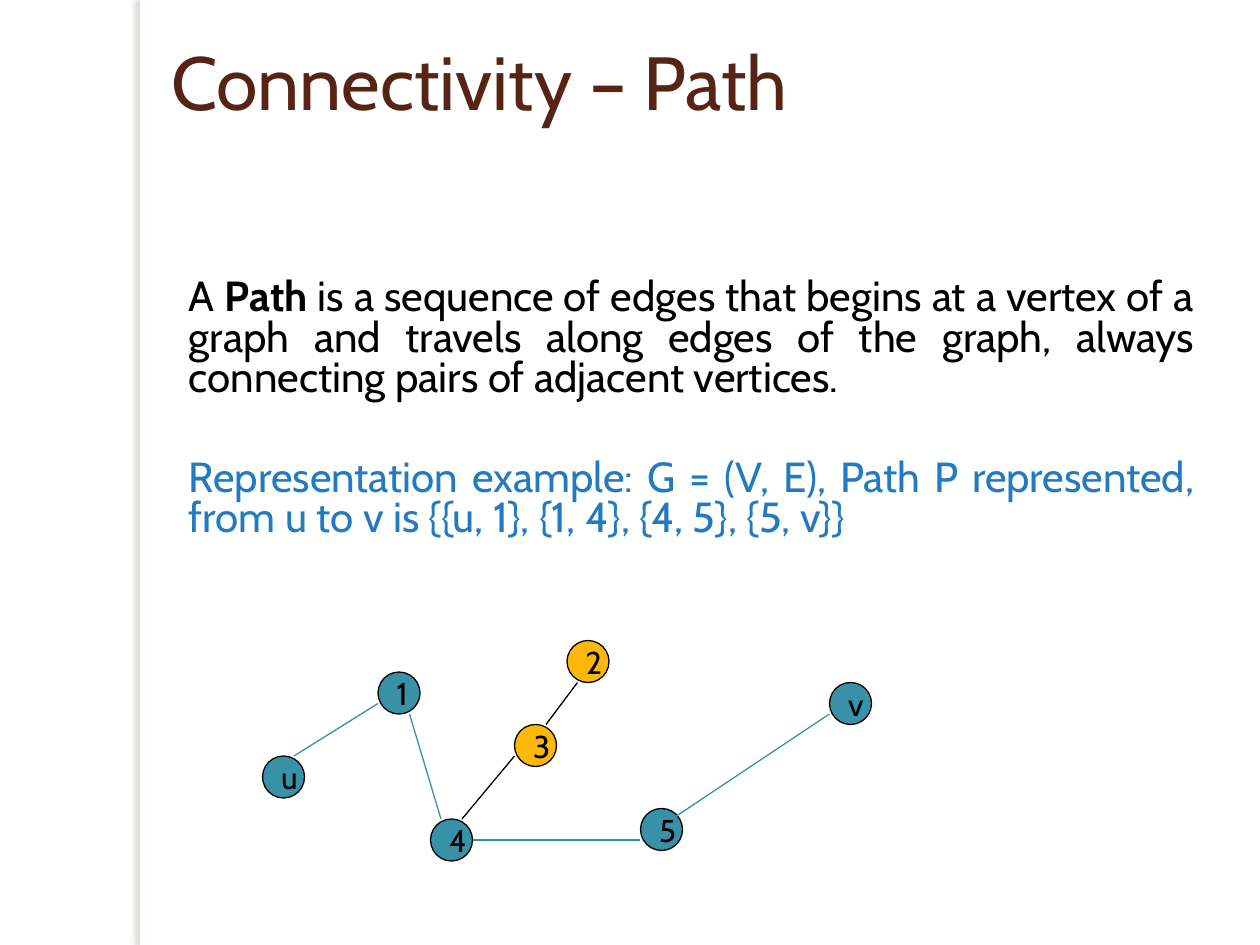
"""Builds a slide that defines a path in a graph and shows one from u to v."""
from lxml import etree
from pptx import Presentation
from pptx import util as u
from pptx.dml.color import RGBColor
from pptx.enum import shapes, text
from pptx.oxml import ns

FONT = "Cabin"
BLACK, WHITE, TEAL, AMBER = "000000", "FFFFFF", "3891A7", "FEB80A"
BROWN, BLUE = "572314", "237AC1"
GRID = 2.54 / 12
NODE_SIZE = 4

TITLE = "Connectivity – Path"
DEFINITION = [
    ("A ", False),
    ("Path", True),
    (" is a sequence of edges that begins at a vertex of a graph and travels "
     "along edges of the graph, always connecting pairs of adjacent vertices.", False),
]
EXAMPLE = [
    ("Representation example: G = (V, E), Path P represented, "
     "from u to v is {{u, 1}, {1, 4}, {4, 5}, {5, v}}", False),
]
PARAGRAPHS = [(DEFINITION, BLACK, 0), (EXAMPLE, BLUE, 34)]

NODES = [
    ("1", 36, 64, TEAL),
    ("u", 25, 72, TEAL),
    ("3", 49, 69, AMBER),
    ("4", 41, 78, TEAL),
    ("5", 61, 77, TEAL),
    ("2", 54, 61, AMBER),
    ("v", 79, 65, TEAL),
]
EDGES = [
    ((28, 72), (36, 67), TEAL),
    ((39, 68), (42, 78), TEAL),
    ((45, 80), (61, 80), TEAL),
    ((64, 78), (79, 68), TEAL),
    ((55, 65), (52, 69), BLACK),
    ((49, 72), (44, 78), BLACK),
]


def paint(colour_format, colour):
    colour_format.rgb = RGBColor.from_string(colour)


def fill(shape, colour):
    shape.fill.solid()
    paint(shape.fill.fore_color, colour)


def outline(shape, colour):
    shape.line.width = u.Pt(0.75)
    paint(shape.line.color, colour)


def write(paragraph, words, size=18, colour=BLACK, bold=False, align=text.PP_ALIGN.LEFT):
    paragraph.alignment = align
    run = paragraph.add_run()
    run.text = words
    run.font.name = FONT
    run.font.size = u.Pt(size)
    run.font.bold = bold
    paint(run.font.color, colour)


def on_grid(*steps):
    return [u.Cm(step * GRID) for step in steps]


def add_band(slide):
    band = slide.shapes.add_shape(
        shapes.MSO_SHAPE.RECTANGLE, u.Cm(2.82), 0, u.Cm(0.2), u.Cm(19.05))
    band.shadow.inherit = False
    fill(band, WHITE)
    band.line.fill.background()
    effects = band.element.spPr.find(ns.qn("a:effectLst"))
    shadow = etree.SubElement(effects, ns.qn("a:outerShdw"), blurRad=str(u.Pt(3)),
                              dist=str(u.Pt(3)), dir="10800000", algn="tl", rotWithShape="0")
    tint = etree.SubElement(shadow, ns.qn("a:srgbClr"), val="736F63")
    etree.SubElement(tint, ns.qn("a:alpha"), val="25000")


def add_title(slide):
    title = slide.shapes.title
    title.left, title.top = u.Cm(3.2), u.Cm(0.58)
    title.width, title.height = u.Cm(21.64), u.Cm(4.06)
    title.text_frame.vertical_anchor = text.MSO_ANCHOR.TOP
    write(title.text_frame.paragraphs[0], TITLE, size=43, colour=BROWN)


def add_explanation(slide):
    frame = slide.shapes.add_textbox(
        u.Cm(2.54), u.Cm(5.51), u.Cm(21.79), u.Cm(6.55)).text_frame
    frame.word_wrap = True
    for index, (parts, colour, gap) in enumerate(PARAGRAPHS):
        paragraph = frame.add_paragraph() if index else frame.paragraphs[0]
        paragraph.line_spacing = 0.8
        if gap:
            paragraph.space_before = u.Pt(gap)
        paragraph._p.get_or_add_pPr().set("marL", str(u.Cm(1.02)))
        for words, bold in parts:
            write(paragraph, words, size=24, colour=colour, bold=bold,
                  align=text.PP_ALIGN.JUSTIFY)


def add_node(slide, label, column, row, colour):
    node = slide.shapes.add_shape(
        shapes.MSO_SHAPE.OVAL, *on_grid(column, row, NODE_SIZE, NODE_SIZE))
    node.shadow.inherit = False
    fill(node, colour)
    outline(node, BLACK)
    node.text_frame.word_wrap = False
    node.text_frame.vertical_anchor = text.MSO_ANCHOR.MIDDLE
    write(node.text_frame.paragraphs[0], label)


def add_edge(slide, start, end, colour):
    edge = slide.shapes.add_connector(
        shapes.MSO_CONNECTOR.STRAIGHT, *on_grid(*start, *end))
    outline(edge, colour)
    etree.SubElement(edge._element.spPr, ns.qn("a:effectLst"))


def main():
    deck = Presentation()
    deck.slide_width, deck.slide_height = u.Cm(25.4), u.Cm(19.05)
    slide = deck.slides.add_slide(deck.slide_layouts[5])
    add_band(slide)
    add_title(slide)
    add_explanation(slide)
    for node in NODES:
        add_node(slide, *node)
    for edge in EDGES:
        add_edge(slide, *edge)
    deck.save("out.pptx")


if __name__ == "__main__":
    main()
